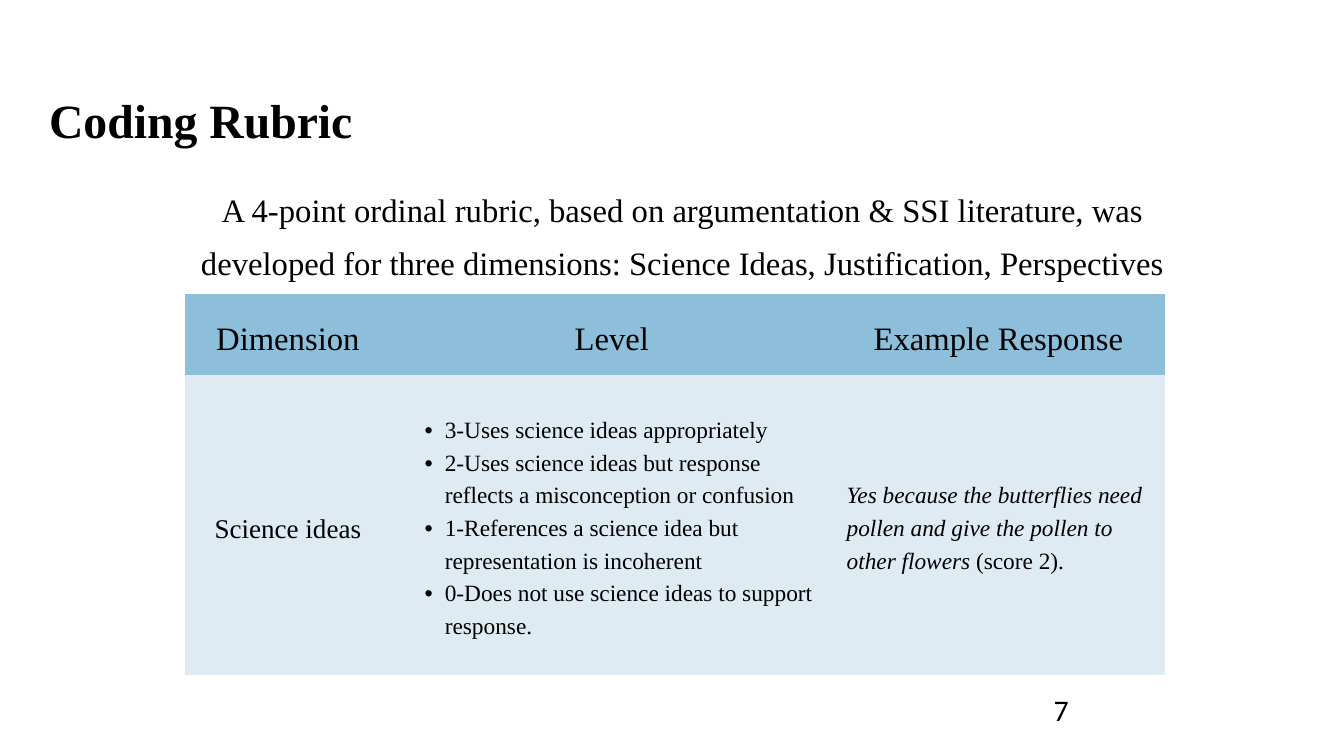
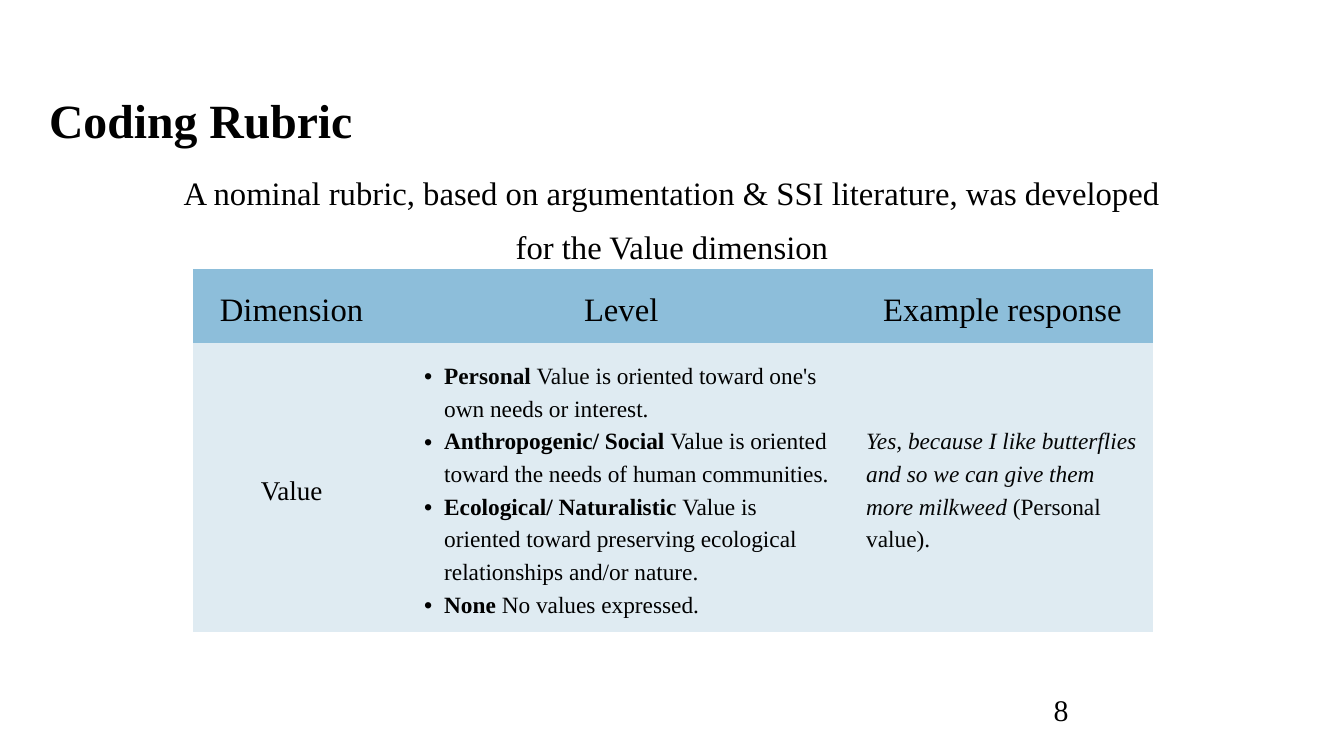
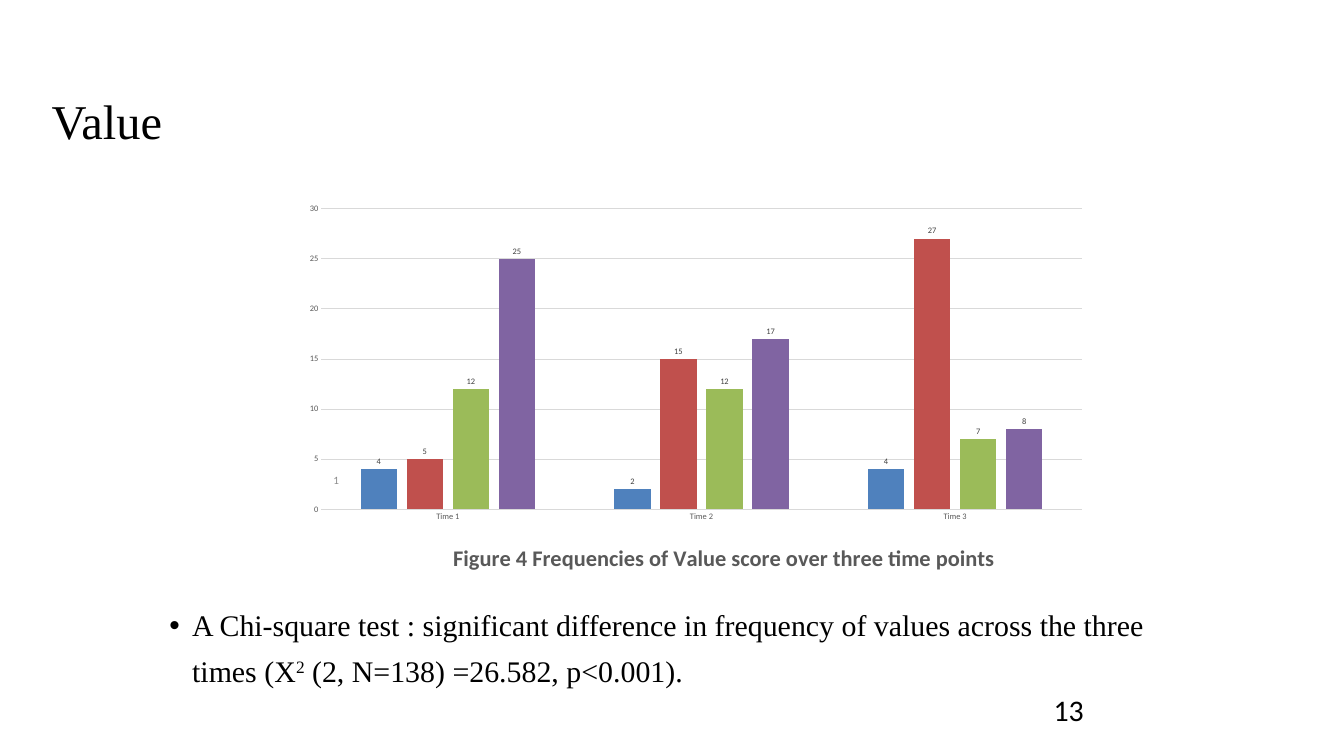
from dataclasses import dataclass
from typing import NamedTuple, Sequence

from pptx import Presentation
from pptx.chart.data import CategoryChartData
from pptx.dml.color import RGBColor
from pptx.enum.chart import XL_CHART_TYPE as ChartType, XL_LABEL_POSITION as LabelPos
from pptx.enum.chart import XL_TICK_MARK as Tick
from pptx.enum.text import MSO_ANCHOR as Anchor, MSO_AUTO_SIZE as AutoSize, PP_ALIGN as Align
from pptx.oxml import parse_xml
from pptx.oxml.ns import nsdecls, qn
from pptx.util import Emu, Pt

PX = 9144
SERIF, SANS = "Times New Roman", "Calibri"
BLACK, INK, GREY, LABEL, RULE = "000000", "040505", "595959", "404040", "D9D9D9"
HEADER_FILL, BODY_FILL = "8DBEDA", "DFEBF2"
NO_STYLE = "{2D5ABB26-0587-4C30-8999-92F81FD0307C}"
CELL_INSET = 21


class Box(NamedTuple):
    left: int
    top: int
    width: int
    height: int


class Span(NamedTuple):
    text: str
    bold: bool = False
    italic: bool = False
    color: str = BLACK
    superscript: bool = False


class Bars(NamedTuple):
    values: Sequence[int]
    color: str


Line = Sequence[Span]


@dataclass(frozen=True)
class Style:
    size: float
    spacing: float | None = None
    font: str = SERIF
    align: Align = Align.LEFT
    margin: int = 0
    indent: int = 0
    bullet: bool = False
    level: int = 0


@dataclass(frozen=True)
class Rubric:
    intro: str
    intro_box: Box
    table_box: Box
    columns: Sequence[int]
    rows: Sequence[int]
    example_heading: str
    dimension: str
    levels: Sequence[Line]
    example: Line
    number: str
    number_font: str


TITLE_BOX = Box(73, 121, 635, 91)
INTRO = Style(35, 57.4, align=Align.CENTER, margin=41, level=1)
HEADING = Style(35, 49, align=Align.CENTER)
DIMENSION = Style(29, 40.6, align=Align.CENTER)
LEVELS = Style(25, 35, margin=59, indent=-30, bullet=True, level=1)
EXAMPLE = Style(25, 35)
FINDING = Style(32, 49.1, margin=69, indent=-34, bullet=True, level=1)

RUBRICS = (
    Rubric(
        "A 4-point ordinal rubric, based on argumentation & SSI literature, was developed "
        "for three dimensions: Science Ideas, Justification, Perspectives",
        Box(233, 261, 1525, 151),
        Box(275, 438, 1458, 567),
        (307, 657, 494),
        (120, 447),
        "Example Response",
        "Science ideas",
        (
            [Span("3-Uses science ideas appropriately")],
            [Span("2-Uses science ideas but response reflects a misconception or confusion")],
            [Span("1-References a science idea but representation is incoherent")],
            [Span("0-Does not use science ideas to support response.")],
        ),
        [
            Span("Yes because the butterflies need pollen and give the pollen to other flowers ", italic=True),
            Span("(score 2)."),
        ],
        "7",
        SANS,
    ),
    Rubric(
        "A nominal rubric, based on argumentation & SSI literature, was developed "
        "for the Value dimension",
        Box(217, 236, 1525, 151),
        Box(287, 400, 1430, 531),
        (294, 687, 448),
        (98, 423),
        "Example response",
        "Value",
        (
            [
                Span("Personal ", bold=True, color=INK),
                Span("Value", color=INK),
                Span(" is oriented toward one's own needs or interest."),
            ],
            [
                Span("Anthropogenic/ Social ", bold=True),
                Span("Value is oriented toward the needs of human communities."),
            ],
            [
                Span("Ecological/ Naturalistic ", bold=True),
                Span("Value is oriented toward preserving ecological relationships and/or nature."),
            ],
            [Span("None", bold=True), Span(" No values expressed.")],
        ),
        [
            Span("Yes, because I like butterflies and so we can give them more milkweed ", italic=True, color=INK),
            Span("(Personal value).", color=INK),
        ],
        "8",
        SERIF,
    ),
)

TIMES = ("Time 1", "Time 2", "Time 3")
FREQUENCIES = (
    Bars((4, 2, 4), "4F81BD"),
    Bars((5, 15, 27), "C0504D"),
    Bars((12, 12, 7), "9BBB59"),
    Bars((25, 17, 8), "8064A2"),
)


def px(n: int) -> Emu:
    return Emu(n * PX)


def rgb(color: str) -> RGBColor:
    return RGBColor.from_string(color)


def set_font(font, size: float, color: str, name: str, bold: bool = False) -> None:
    font.size, font.name, font.bold = Pt(size), name, bold
    font.color.rgb = rgb(color)


def set_insets(target, inset: int) -> None:
    target.margin_left = target.margin_right = px(inset)
    target.margin_top = target.margin_bottom = px(inset)


def write(tf, lines: Sequence[Line], style: Style) -> None:
    for i, line in enumerate(lines):
        p = tf.add_paragraph() if i else tf.paragraphs[0]
        pPr = p._p.get_or_add_pPr()
        pPr.set("marL", str(px(style.margin)))
        pPr.set("indent", str(px(style.indent)))
        if style.bullet:
            pPr.append(parse_xml(f'<a:buFont {nsdecls("a")} typeface="Arial"/>'))
            pPr.append(parse_xml(f'<a:buChar {nsdecls("a")} char="•"/>'))
        p.level, p.alignment = style.level, style.align
        p.space_before = p.space_after = Pt(0)
        if style.spacing:
            p.line_spacing = Pt(style.spacing)
        for span in line:
            r = p.add_run()
            r.text = span.text
            set_font(r.font, style.size, span.color, style.font, span.bold)
            r.font.italic = span.italic
            if span.superscript:
                r.font._element.set("baseline", "30000")


def fill_frame(sp, box: Box, lines: Sequence[Line], style: Style) -> None:
    sp.left, sp.top, sp.width, sp.height = map(px, box)
    tf = sp.text_frame
    tf.word_wrap, tf.auto_size = True, AutoSize.SHAPE_TO_FIT_TEXT
    tf.vertical_anchor = Anchor.TOP
    set_insets(tf, 0)
    write(tf, lines, style)


def add_label(s, box: Box, text: str, style: Style, color: str = BLACK):
    tf = s.shapes.add_textbox(*map(px, box)).text_frame
    tf.word_wrap = True
    write(tf, [[Span(text, color=color)]], style)
    return tf


def add_number(s, number: str, font: str) -> None:
    add_label(s, Box(1558, 1024, 25 + 25 * len(number), 64), number, Style(32, font=font))


def add_rubric_table(s, rubric: Rubric) -> None:
    table = s.shapes.add_table(2, 3, *map(px, rubric.table_box)).table
    table.first_row = table.horz_banding = False
    table._tbl.tblPr.find(qn("a:tableStyleId")).text = NO_STYLE
    for column, width in zip(table.columns, rubric.columns):
        column.width = px(width)
    for row, height in zip(table.rows, rubric.rows):
        row.height = px(height)
    headings = ("Dimension", "Level", rubric.example_heading)
    contents = (
        [([[Span(h)]], HEADING) for h in headings],
        [
            ([[Span(rubric.dimension)]], DIMENSION),
            (rubric.levels, LEVELS),
            ([rubric.example], EXAMPLE),
        ],
    )
    for i, (row, fill) in enumerate(zip(contents, (HEADER_FILL, BODY_FILL))):
        for j, (lines, style) in enumerate(row):
            cell = table.cell(i, j)
            cell.fill.solid()
            cell.fill.fore_color.rgb = rgb(fill)
            cell.vertical_anchor = Anchor.MIDDLE
            set_insets(cell, CELL_INSET)
            write(cell.text_frame, lines, style)


def add_rubric_slide(prs, rubric: Rubric) -> None:
    s = prs.slides.add_slide(prs.slide_layouts[5])
    add_rubric_table(s, rubric)
    intro = s.shapes.add_textbox(*map(px, rubric.intro_box))
    fill_frame(intro, rubric.intro_box, [[Span(rubric.intro)]], INTRO)
    add_number(s, rubric.number, rubric.number_font)
    fill_frame(s.shapes.title, TITLE_BOX, [[Span("Coding Rubric", bold=True)]], Style(51.1, 71.5))


def place(element, index: int, target: str, **fractions: float) -> None:
    for old in element.findall(qn("c:layout")):
        element.remove(old)
    modes = '<c:xMode val="edge"/><c:yMode val="edge"/>'
    values = "".join(f'<c:{key} val="{value}"/>' for key, value in fractions.items())
    element.insert(index, parse_xml(
        f'<c:layout {nsdecls("c")}><c:manualLayout>{target}{modes}{values}</c:manualLayout></c:layout>'
    ))


def add_frequency_chart(s) -> None:
    data = CategoryChartData()
    data.categories = TIMES
    for bars in FREQUENCIES:
        data.add_series("", bars.values)
    box = Box(442, 221, 1192, 642)
    chart = s.shapes.add_chart(ChartType.COLUMN_CLUSTERED, *map(px, box), data).chart
    set_font(chart.font, 10, BLACK, SANS)
    chart.has_legend = False

    tf = chart.chart_title.text_frame
    tf.text = "Figure 4 Frequencies of Value score over three time points"
    set_font(tf.paragraphs[0].runs[0].font, 24, GREY, SANS, True)
    place(chart.chart_title._element, 1, "", x=0.19, y=0.91)
    place(chart._chartSpace.chart.plotArea, 0, '<c:layoutTarget val="inner"/>',
          x=0.03, y=0.14, w=0.95, h=0.7)

    for axis in (chart.category_axis, chart.value_axis):
        axis.major_tick_mark = axis.minor_tick_mark = Tick.NONE
        set_font(axis.tick_labels.font, 9, GREY, SANS)
    value_axis = chart.value_axis
    value_axis.minimum_scale, value_axis.maximum_scale, value_axis.major_unit = 0, 30, 5
    value_axis.format.line.fill.background()
    for rule in (chart.category_axis.format.line, value_axis.major_gridlines.format.line):
        rule.color.rgb, rule.width = rgb(RULE), Pt(0.75)

    plot = chart.plots[0]
    plot.vary_by_categories, plot.gap_width, plot.overlap = False, 219, -27
    for series, bars in zip(plot.series, FREQUENCIES):
        series.format.fill.solid()
        series.format.fill.fore_color.rgb = rgb(bars.color)
        labels = series.data_labels
        labels.show_value, labels.position = True, LabelPos.OUTSIDE_END
        set_font(labels.font, 9, LABEL, SANS)


def add_value_slide(prs) -> None:
    s = prs.slides.add_slide(prs.slide_layouts[1])
    finding = [
        Span("A Chi-square test : significant difference in frequency of values across the three times (X"),
        Span("2", superscript=True),
        Span(" (2, N=138) =26.582, p<0.001)."),
    ]
    fill_frame(s.placeholders[1], Box(217, 888, 1566, 131), [finding], FINDING)
    fill_frame(s.shapes.title, Box(77, 121, 198, 94), [[Span("Value")]], Style(52, 72.8))
    add_frequency_chart(s)
    add_number(s, "13", SANS)
    tf = add_label(s, Box(342, 695, 317, 40), "1", Style(12, font=SANS, align=Align.CENTER), "8C8C8C")
    tf.vertical_anchor = Anchor.MIDDLE


def main() -> None:
    prs = Presentation()
    prs.slide_width, prs.slide_height = px(2000), px(1125)
    for rubric in RUBRICS:
        add_rubric_slide(prs, rubric)
    add_value_slide(prs)
    prs.save("out.pptx")


if __name__ == "__main__":
    main()
